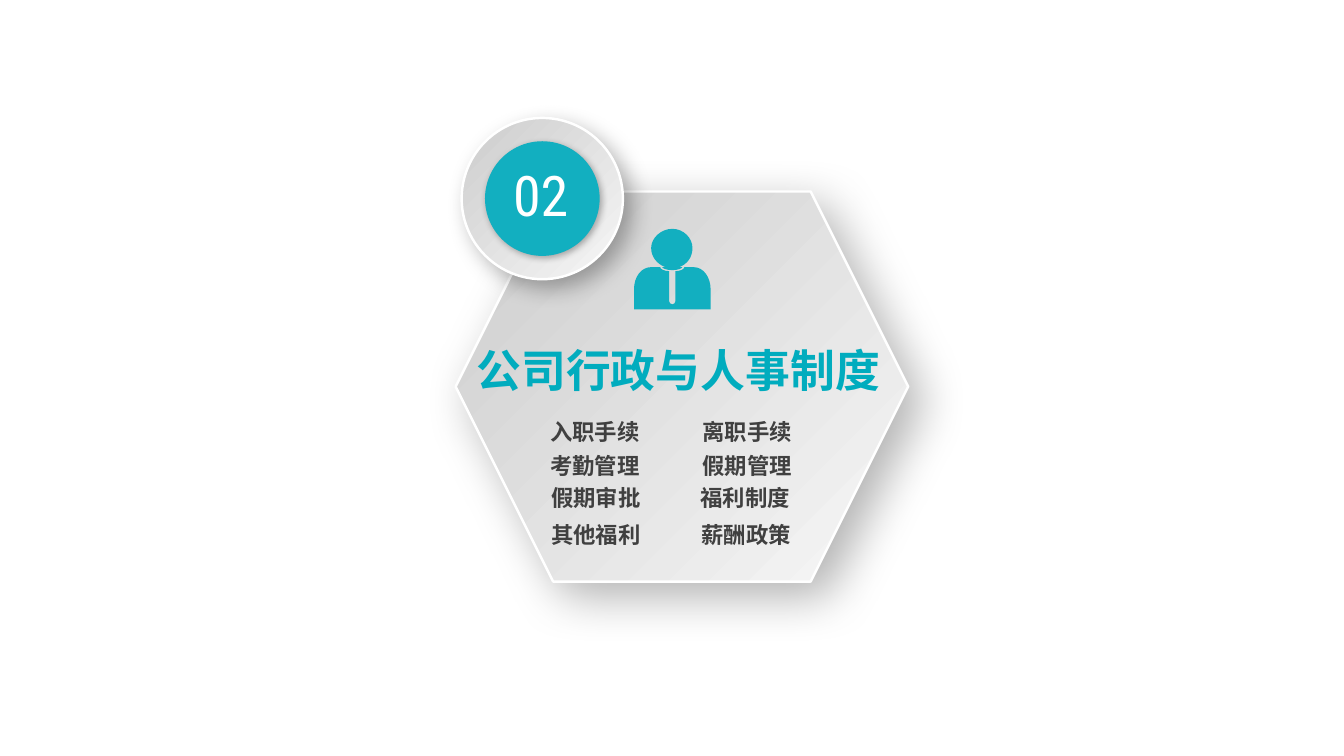
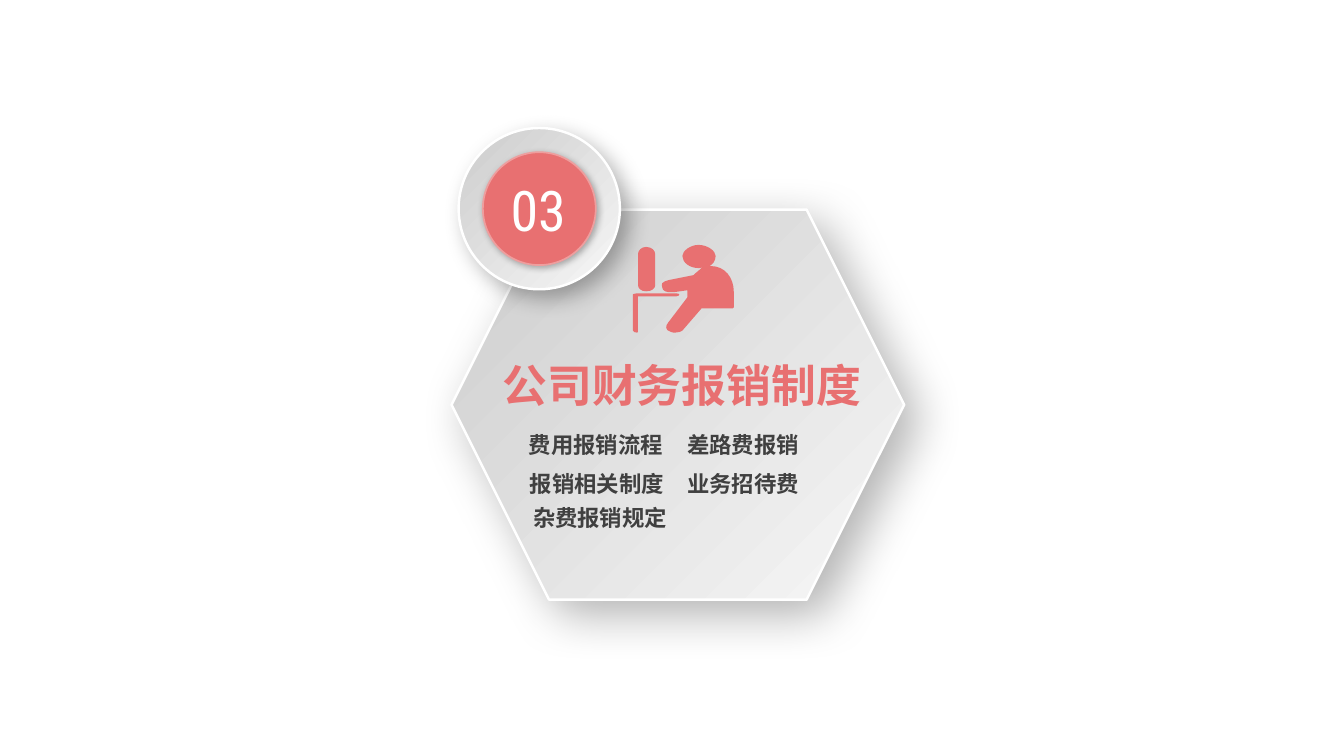
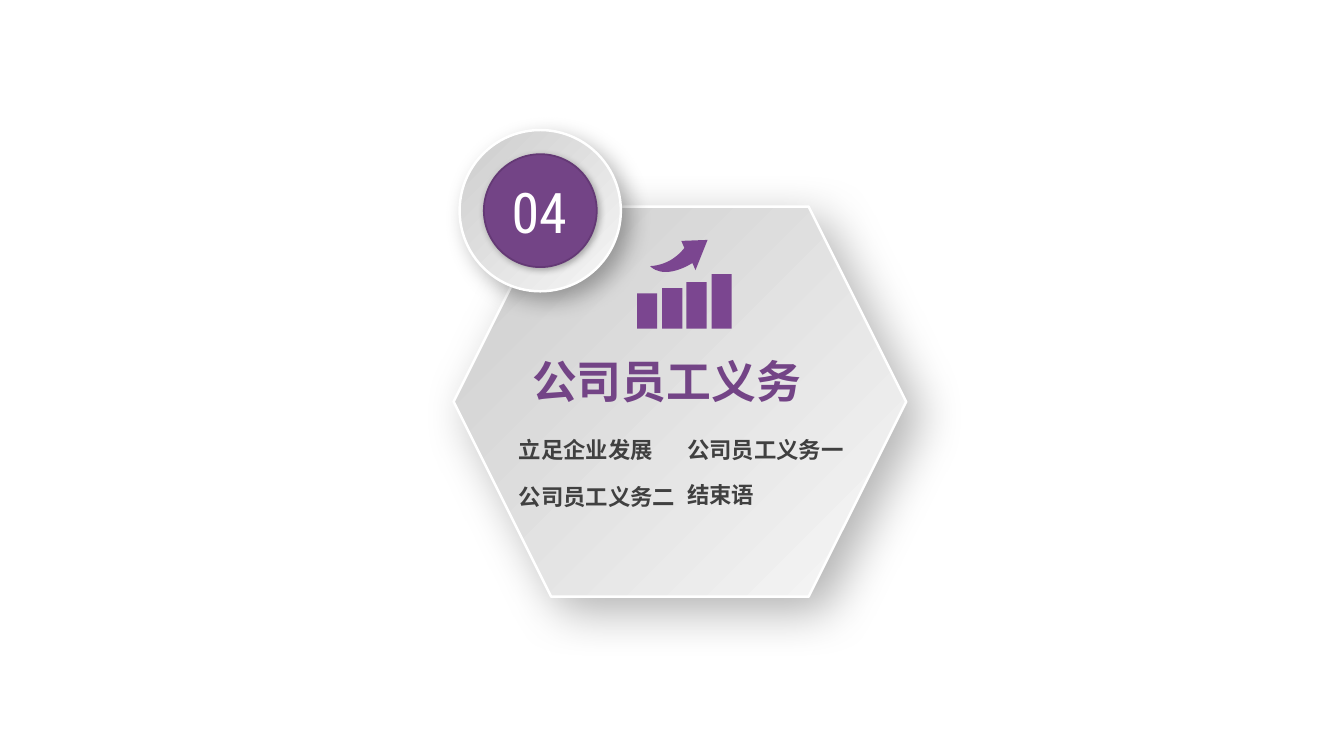
"""Three section cards of a staff handbook: a hexagon with a numbered badge, an icon and topics."""
from dataclasses import dataclass
from typing import NamedTuple

from lxml.etree import SubElement
from pptx import Presentation
from pptx.dml.color import RGBColor
from pptx.enum.shapes import MSO_SHAPE
from pptx.enum.text import MSO_AUTO_SIZE, PP_ALIGN
from pptx.oxml.ns import qn
from pptx.util import Emu, Pt

EMU_PER_PX = 9144
CJK_FONT = "Noto Sans CJK SC"
NUMBER_FONT = "Roboto Condensed"
COLORS = {
    "silver_dark": "CCCCCC",
    "silver_light": "F7F7F7",
    "white": "FFFFFF",
    "shadow": "000000",
    "topic": "404040",
    "teal": "12AFC0",
    "teal_title": "01ACBE",
    "coral": "E87071",
    "coral_rim": "EE9E9E",
    "purple": "734486",
    "purple_rim": "643975",
    "purple_icon": "7B4690",
}

Segment = tuple[int, ...]
Outline = tuple[Segment, ...]


class Box(NamedTuple):
    left: int
    top: int
    width: int
    height: int


class Shadow(NamedTuple):
    blur: int
    distance: int


class Topic(NamedTuple):
    text: str
    left: int
    top: int
    wrap_width: int | None = None


class Palette(NamedTuple):
    disc: str
    rim: str
    title: str
    icon: str


class TextStyle(NamedTuple):
    font: str
    size: int
    bold: bool
    align: PP_ALIGN


@dataclass(frozen=True)
class Section:
    number: str
    title: str
    palette: Palette
    hexagon: tuple[int, int]
    ring: tuple[int, int]
    number_box: Box
    title_box: Box
    topics: tuple[Topic, ...]
    outlines: tuple[Outline, ...]
    bars: tuple[Box, ...] = ()


NUMBER_STYLE = TextStyle(NUMBER_FONT, 40, False, PP_ALIGN.CENTER)
TITLE_STYLE = TextStyle(CJK_FONT, 32, True, PP_ALIGN.CENTER)
TOPIC_STYLE = TextStyle(CJK_FONT, 16, True, PP_ALIGN.LEFT)

HEAD: Outline = (
    (660, 265), (657, 265), (657, 266, 661, 268, 667, 268),
    (673, 268, 677, 266, 677, 265), (674, 265),
    (682, 262, 687, 255, 687, 246), (687, 236, 678, 227, 667, 227),
    (656, 227, 646, 236, 646, 246), (646, 255, 652, 262, 660, 265),
)
SUIT: Outline = (
    (688, 265), (679, 265), (679, 267, 675, 269, 670, 269), (670, 299),
    (670, 300, 669, 302, 667, 302), (665, 302, 664, 300, 664, 299), (664, 269),
    (659, 269, 655, 267, 655, 265), (646, 265), (636, 265, 629, 275, 629, 287),
    (629, 307), (705, 307), (705, 287), (705, 275, 698, 265, 688, 265),
)
DESK: Outline = (
    (632, 291), (671, 291), (673, 291, 674, 292, 674, 292),
    (674, 293, 673, 294, 671, 294), (633, 294), (633, 328),
    (633, 329, 633, 330, 632, 330), (630, 330, 628, 329, 628, 328),
    (628, 292), (628, 292, 630, 291, 632, 291),
)
SCREEN: Outline = (
    (650, 283), (650, 252), (650, 249, 647, 245, 641, 245),
    (636, 245, 633, 249, 633, 252), (633, 283),
    (633, 286, 636, 289, 641, 289), (647, 289, 650, 286, 650, 283),
)
CLERK: Outline = (
    (663, 320), (660, 323, 660, 328, 665, 329), (666, 330, 668, 330, 670, 330),
    (673, 330, 676, 329, 677, 328), (696, 306), (727, 306),
    (728, 306, 728, 306, 728, 305), (728, 290), (728, 275, 719, 264, 705, 264),
    (703, 264, 702, 264, 702, 265), (707, 263, 710, 259, 710, 254),
    (710, 249, 702, 243, 693, 243), (685, 243, 677, 249, 677, 254),
    (677, 261, 685, 266, 693, 266), (694, 266, 696, 266, 697, 265),
    (694, 268, 691, 270, 688, 273), (663, 278), (660, 279, 659, 279, 657, 281),
    (657, 282, 656, 284, 657, 285), (657, 289, 662, 290, 665, 290),
    (666, 290, 666, 290, 668, 290), (682, 288), (682, 289, 682, 290, 682, 291),
    (682, 295), (663, 320),
)
ARROW: Outline = (
    (679, 246), (676, 250, 665, 263, 645, 264), (645, 264, 657, 279, 687, 261),
    (690, 268), (702, 238), (676, 239), (679, 246),
)
BARS = tuple(
    Box(632 + round(index * 74 / 3), 326 - height, 20, height)
    for index, height in enumerate((35, 40, 46, 54))
)

SECTIONS = (
    Section(
        "02", "公司行政与人事制度",
        Palette("teal", "teal", "teal_title", "teal"),
        (452, 190), (458, 117), Box(488, 154, 97, 77), Box(456, 335, 434, 67),
        (
            Topic("入职手续", 536, 410), Topic("离职手续", 687, 410),
            Topic("考勤管理", 536, 444), Topic("假期管理", 687, 444),
            Topic("假期审批", 537, 475), Topic("福利制度", 685, 475),
            Topic("其他福利", 537, 512), Topic("薪酬政策", 686, 512),
        ),
        (HEAD, SUIT),
    ),
    Section(
        "03", "公司财务报销制度",
        Palette("coral", "coral_rim", "coral", "coral"),
        (448, 208), (455, 127), Box(472, 169, 124, 77), Box(478, 350, 397, 67),
        (
            Topic("费用报销流程", 515, 423), Topic("差路费报销", 672, 423),
            Topic("报销相关制度", 516, 461), Topic("业务招待费", 672, 461),
            Topic("杂费报销规定", 519, 495),
        ),
        (DESK, SCREEN, CLERK),
    ),
    Section(
        "04", "公司员工义务",
        Palette("purple", "purple_rim", "purple", "purple_icon"),
        (450, 205), (456, 129), Box(473, 171, 124, 77), Box(483, 346, 357, 67),
        (
            Topic("立足企业发展", 505, 428, 176), Topic("公司员工义务一", 672, 428, 231),
            Topic("公司员工义务二", 505, 474, 194), Topic("结束语", 672, 472, 122),
        ),
        (ARROW,),
        BARS,
    ),
)


def px(length: int) -> Emu:
    return Emu(length * EMU_PER_PX)


def rgb(color: str) -> RGBColor:
    return RGBColor.from_string(COLORS[color])


def cast_shadow(shape, shadow: Shadow) -> None:
    shape.shadow.inherit = False
    effects = shape._element.spPr.find(qn("a:effectLst"))
    outer = SubElement(
        effects, qn("a:outerShdw"),
        blurRad=str(Pt(shadow.blur)), dist=str(Pt(shadow.distance)),
        dir=str(45 * 60000), algn="tl", rotWithShape="0",
    )
    tint = SubElement(outer, qn("a:srgbClr"), val=COLORS["shadow"])
    SubElement(tint, qn("a:alpha"), val="30000")


def add_silver(shapes, preset: MSO_SHAPE, box: Box, shadow: Shadow) -> None:
    plate = shapes.add_shape(preset, *map(px, box))
    plate.fill.gradient()
    plate.fill.gradient_angle = 315
    ends = ("silver_dark", "silver_light")
    for position, (stop, color) in enumerate(zip(plate.fill.gradient_stops, ends)):
        stop.position = position
        stop.color.rgb = rgb(color)
    plate.line.color.rgb = rgb("white")
    plate.line.width = Pt(1.75)
    cast_shadow(plate, shadow)


def add_text(shapes, text: str, box: Box, style: TextStyle, color: str, wrap: bool = True) -> None:
    frame = shapes.add_textbox(*map(px, box)).text_frame
    frame.word_wrap = wrap
    frame.auto_size = MSO_AUTO_SIZE.SHAPE_TO_FIT_TEXT
    frame.text = text
    paragraph = frame.paragraphs[0]
    paragraph.alignment = style.align
    run = paragraph.runs[0]
    run.font.name = style.font
    run.font.size = Pt(style.size)
    run.font.bold = style.bold
    run.font.color.rgb = rgb(color)
    SubElement(run._r.get_or_add_rPr(), qn("a:ea"), typeface=style.font)


def paint_flat(shape, color: str) -> None:
    shape.fill.solid()
    shape.fill.fore_color.rgb = rgb(color)
    shape.line.fill.background()
    shape.shadow.inherit = False


def add_outline(shapes, outline: Outline, color: str) -> None:
    """Draw all points as lines, then merge each curve's three lines into one Bézier."""
    start, *segments = outline
    points = [
        (px(x), px(y)) for segment in segments for x, y in zip(segment[::2], segment[1::2])
    ]
    builder = shapes.build_freeform(*map(px, start), scale=1.0)
    builder.add_line_segments(points, close=True)
    shape = builder.convert_to_shape()
    lines = iter(list(shape._element.iter(qn("a:lnTo"))))
    for segment in segments:
        first = next(lines)
        if len(segment) == 6:
            first.tag = qn("a:cubicBezTo")
            for line in (next(lines), next(lines)):
                first.append(line[0])
                line.getparent().remove(line)
    paint_flat(shape, color)


def add_icon(slide, section: Section) -> None:
    shapes = slide.shapes.add_group_shape().shapes
    for bar in section.bars:
        paint_flat(shapes.add_shape(MSO_SHAPE.RECTANGLE, *map(px, bar)), section.palette.icon)
    for outline in section.outlines:
        add_outline(shapes, outline, section.palette.icon)


def add_badge(slide, section: Section) -> None:
    shapes = slide.shapes.add_group_shape().shapes
    left, top = section.ring
    add_silver(shapes, MSO_SHAPE.OVAL, Box(left, top, 160, 160), Shadow(16, 8))
    disc = shapes.add_shape(MSO_SHAPE.OVAL, *map(px, Box(left + 24, top + 24, 112, 112)))
    disc.fill.solid()
    disc.fill.fore_color.rgb = rgb(section.palette.disc)
    disc.line.color.rgb = rgb(section.palette.rim)
    disc.line.width = Pt(1.25)
    cast_shadow(disc, Shadow(5, 2))
    add_text(shapes, section.number, section.number_box, NUMBER_STYLE, "white")


def add_topic(slide, topic: Topic) -> None:
    width = topic.wrap_width or round(20 + len(topic.text) * TOPIC_STYLE.size / 0.72)
    box = Box(topic.left, topic.top, width, 39)
    add_text(slide.shapes, topic.text, box, TOPIC_STYLE, "topic", topic.wrap_width is not None)


def add_section(deck, section: Section) -> None:
    slide = deck.slides.add_slide(deck.slide_layouts[6])
    add_silver(slide.shapes, MSO_SHAPE.HEXAGON, Box(*section.hexagon, 449, 387), Shadow(35, 14))
    add_badge(slide, section)
    add_text(slide.shapes, section.title, section.title_box, TITLE_STYLE, section.palette.title)
    add_icon(slide, section)
    for topic in section.topics:
        add_topic(slide, topic)


def main() -> None:
    deck = Presentation()
    deck.slide_height = px(750)
    deck.slide_width = Emu(deck.slide_height * 16 // 9)
    for section in SECTIONS:
        add_section(deck, section)
    deck.save("out.pptx")


if __name__ == "__main__":
    main()
